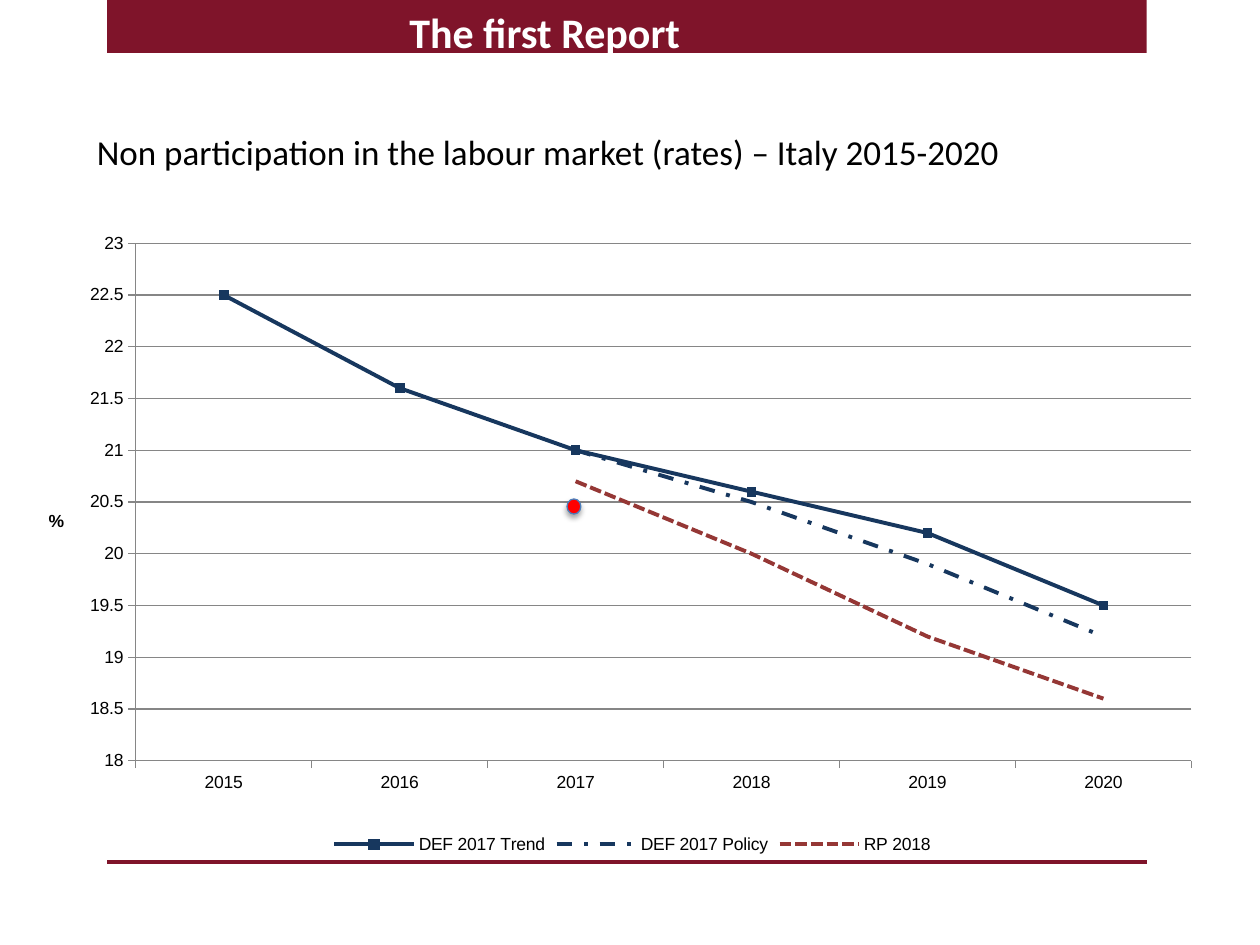
import dataclasses
import typing

import lxml.etree
import pptx
import pptx.chart.data
import pptx.dml.color
import pptx.enum.chart
import pptx.enum.dml
import pptx.enum.shapes
import pptx.oxml
import pptx.oxml.ns
import pptx.util

# The slide is a grid of 100 columns by 75 rows.
WIDE, HIGH = pptx.util.Inches(10), pptx.util.Inches(7.5)
COLS, ROWS = 100, 75
WINE, NAVY, RUST, GREY = "7F142A", "17375E", "953735", "868686"
DASH = pptx.enum.dml.MSO_LINE


@dataclasses.dataclass
class Box:
    col: float
    row: float
    cols: float
    rows: float

    def place(self) -> tuple[int, int, int, int]:
        return (int(WIDE * self.col / COLS), int(HIGH * self.row / ROWS),
                int(WIDE * self.cols / COLS), int(HIGH * self.rows / ROWS))


@dataclasses.dataclass
class Trend:
    name: str
    rates: list[typing.Optional[float]]
    tint: str
    dash: typing.Any
    marked: bool = False


YEARS = ["2015", "2016", "2017", "2018", "2019", "2020"]
TRENDS = [
    Trend("DEF 2017 Trend", [22.5, 21.6, 21, 20.6, 20.2, 19.5], NAVY, DASH.SOLID, True),
    Trend("DEF 2017 Policy", [None, None, 21, 20.5, 19.9, 19.2], NAVY, DASH.DASH_DOT),
    Trend("RP 2018", [None, None, 20.7, 20, 19.2, 18.6], RUST, DASH.SQUARE_DOT),
]


def paint(part: typing.Any, tint: str) -> None:
    """Give a fill a solid colour."""
    part.solid()
    part.fore_color.rgb = pptx.dml.color.RGBColor.from_string(tint)


def style(font: typing.Any, face: str, size: float, tint: str, bold: bool) -> None:
    font.name, font.size, font.bold = face, pptx.util.Pt(size), bold
    paint(font.fill, tint)


def write(slide: typing.Any, text: str, box: Box, *, size: float,
          tint: str = "000000", bold: bool = False) -> None:
    frame = slide.shapes.add_textbox(*box.place()).text_frame
    frame.word_wrap = True
    run = frame.paragraphs[0].add_run()
    run.text = text
    style(run.font, "Calibri", size, tint, bold)


def draw(slide: typing.Any, kind: typing.Any, box: Box, tint: str) -> typing.Any:
    shape = slide.shapes.add_shape(kind, *box.place())
    shape.shadow.inherit = False
    paint(shape.fill, tint)
    shape.line.fill.background()
    return shape


def rule(slide: typing.Any, col: float, row: float, cols: float) -> None:
    left, top, wide, _ = Box(col, row, cols, 0).place()
    line = slide.shapes.add_connector(
        pptx.enum.shapes.MSO_CONNECTOR.STRAIGHT, left, top, left + wide, top)
    line.line.width = pptx.util.Pt(2)
    paint(line.line.fill, WINE)
    lxml.etree.SubElement(line._element.spPr, pptx.oxml.ns.qn("a:effectLst"))


def mark(slide: typing.Any, box: Box) -> None:
    """Draw the red dot with its soft shadow."""
    dot = draw(slide, pptx.enum.shapes.MSO_SHAPE.OVAL, box, "FF0000")
    paint(dot.line.fill, "4B7EBC")
    dot.line.width = pptx.util.Pt(0.75)
    glow = dot._element.spPr.find(pptx.oxml.ns.qn("a:effectLst"))
    glow.append(pptx.oxml.parse_xml(
        f'<a:outerShdw {pptx.oxml.ns.nsdecls("a")} blurRad="39400" dist="22900" '
        'dir="5400000" rotWithShape="0"><a:srgbClr val="000000">'
        '<a:alpha val="35000"/></a:srgbClr></a:outerShdw>'))


def lay(node: typing.Any, spot: int, inner: bool = False, **shares: float) -> None:
    """Fix a chart part's layout, given as shares of the chart's size."""
    for old in node.findall(pptx.oxml.ns.qn("c:layout")):
        node.remove(old)
    goal = '<c:layoutTarget val="inner"/>' if inner else ""
    modes = "".join(f'<c:{key}Mode val="edge"/>' for key in "xy")
    sizes = "".join(f'<c:{key} val="{val}"/>' for key, val in shares.items())
    node.insert(spot, pptx.oxml.parse_xml(
        f'<c:layout {pptx.oxml.ns.nsdecls("c")}><c:manualLayout>'
        f'{goal}{modes}{sizes}</c:manualLayout></c:layout>'))


def trace(series: typing.Any, trend: Trend) -> None:
    series.smooth = False
    line = series.format.line
    paint(line.fill, trend.tint)
    line.width, line.dash_style = pptx.util.Pt(2.25), trend.dash
    marks = pptx.enum.chart.XL_MARKER_STYLE
    series.marker.style = marks.SQUARE if trend.marked else marks.NONE
    if trend.marked:
        series.marker.size = 5
        paint(series.marker.format.fill, trend.tint)
        series.marker.format.line.fill.background()


def plot(slide: typing.Any, box: Box) -> None:
    data = pptx.chart.data.CategoryChartData(number_format="General")
    data.categories = YEARS
    for trend in TRENDS:
        data.add_series(trend.name, trend.rates)
    chart = slide.shapes.add_chart(
        pptx.enum.chart.XL_CHART_TYPE.LINE_MARKERS, *box.place(), data).chart
    style(chart.font, "Arial", 10, "000000", False)
    chart.has_title = False
    chart.has_legend = True
    chart.legend.position = pptx.enum.chart.XL_LEGEND_POSITION.BOTTOM
    chart.legend.include_in_layout = False
    chart.plots[0].vary_by_categories = False
    for series, trend in zip(chart.plots[0].series, TRENDS):
        trace(series, trend)

    rates = chart.value_axis
    rates.minimum_scale, rates.maximum_scale, rates.major_unit = 18, 23, 0.5
    rates.has_major_gridlines = True
    for part in (rates, chart.category_axis, rates.major_gridlines):
        paint(part.format.line.fill, GREY)
        part.format.line.width = pptx.util.Pt(0.75)
    for axis in (rates, chart.category_axis):
        axis.major_tick_mark = pptx.enum.chart.XL_TICK_MARK.OUTSIDE

    label = rates.axis_title.text_frame
    run = label.paragraphs[0].add_run()
    run.text = "%"
    style(run.font, "Arial", 10, "000000", True)
    root = chart._chartSpace
    title = root.xpath(".//c:valAx/c:title")[0]
    body = title.xpath(".//a:bodyPr")[0]
    body.set("rot", "0")
    body.set("vert", "horz")
    lay(title, 1, x=0, y=0.48)
    lay(root.xpath(".//c:plotArea")[0], 0, True, x=0.077, y=0.093, w=0.899, h=0.762)


def main() -> None:
    deck = pptx.Presentation()
    deck.slide_width, deck.slide_height = WIDE, HIGH
    slide = deck.slides.add_slide(deck.slide_layouts[6])
    draw(slide, pptx.enum.shapes.MSO_SHAPE.RECTANGLE, Box(8.5, 0, 82.5, 4.2), WINE)
    rule(slide, 8.5, 68.4, 82.5)
    write(slide, "The first Report", Box(31.5, 0, 47.2, 5),
          size=24, tint="FFFFFF", bold=True)
    write(slide, "Non participation in the labour market (rates) – Italy 2015-2020",
          Box(6.7, 9.9, 78.8, 4.4), size=20)
    plot(slide, Box(3.6, 14.3, 93.2, 53.9))
    mark(slide, Box(45, 39.6, 1.1, 1.2))
    deck.save("out.pptx")


if __name__ == "__main__":
    main()
